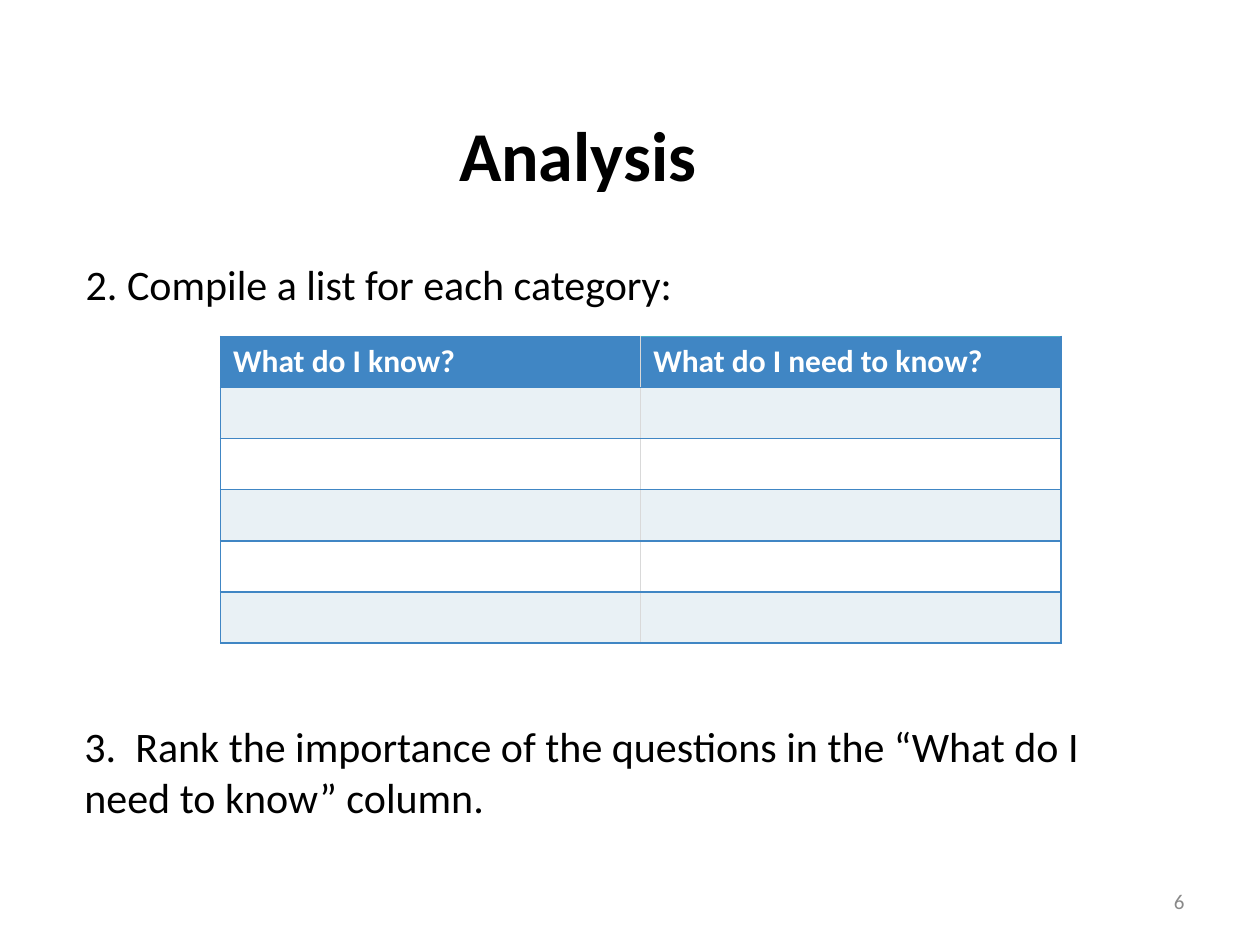
from dataclasses import dataclass

from lxml.etree import SubElement
from pptx import Presentation
from pptx.dml.color import RGBColor
from pptx.enum.text import MSO_ANCHOR as Anchor, MSO_AUTO_SIZE as AutoSize, PP_ALIGN as Align
from pptx.oxml.ns import qn
from pptx.util import Inches, Pt

SLIDE_WIDTH, SLIDE_HEIGHT = 10, 7.5
TWO_CONTENT_LAYOUT = 3
FONT = "Calibri"
BLUE, TEAL, GREY = "4086C4", "4BACC6", "D9D9D9"
STRIPES = ("FFFFFF", "E9F1F5")
HEADINGS = ("What do I know?", "What do I need to know?")
ROWS, ROW_HEIGHT, COLUMN_WIDTH = 6, 0.405, 3.335


@dataclass(frozen=True)
class Style:
    size: int
    color: str = "000000"
    bold: bool = False
    align: Align = Align.LEFT
    anchor: Anchor = Anchor.TOP


@dataclass(frozen=True)
class Block:
    text: str
    left: float
    top: float
    width: float
    height: float
    style: Style


ITEM = Style(24)
TITLE = Block("Analysis", 1, 0.83, 7.17, 0.77,
              Style(40, bold=True, align=Align.CENTER, anchor=Anchor.MIDDLE))
STEPS = (
    Block("2. Compile a list for each category:", 0.58, 2, 8.33, 1.31, ITEM),
    Block("3.  Rank the importance of the questions in the “What do I need to know” column.",
          0.57, 5.67, 8.76, 0.91, ITEM),
)
PAGE_NUMBER = Block("6", 7.17, 6.95, 2.33, 0.4,
                    Style(12, "898989", align=Align.RIGHT, anchor=Anchor.MIDDLE))


def color(value: str) -> RGBColor:
    return RGBColor.from_string(value)


def write(para, text: str, style: Style) -> None:
    para.alignment = style.align
    para.space_before = Pt(0)
    span = para.add_run()
    span.text = text
    span.font.name = FONT
    span.font.size = Pt(style.size)
    span.font.bold = style.bold
    span.font.color.rgb = color(style.color)


def fill_box(box, block: Block) -> None:
    box.left, box.top = Inches(block.left), Inches(block.top)
    box.width, box.height = Inches(block.width), Inches(block.height)
    frame = box.text_frame
    frame.word_wrap = True
    frame.auto_size = AutoSize.NONE
    frame.vertical_anchor = block.style.anchor
    write(frame.paragraphs[0], block.text, block.style)


def remove_bullet(para) -> None:
    properties = para._p.get_or_add_pPr()
    properties.set("marL", "0")
    properties.set("indent", "0")
    SubElement(properties, qn("a:buNone"))


def set_borders(cell, left: str, right: str, top: str, bottom: str) -> None:
    properties = cell._tc.get_or_add_tcPr()
    sides = (("L", left), ("R", right), ("T", top), ("B", bottom))
    for position, (side, value) in enumerate(sides):
        line = SubElement(properties, qn(f"a:ln{side}"), w=str(Pt(1)))
        SubElement(SubElement(line, qn("a:solidFill")), qn("a:srgbClr"), val=value)
        properties.insert(position, line)


def add_category_table(page) -> None:
    columns = len(HEADINGS)
    table = page.shapes.add_table(
        ROWS, columns, Inches(1.75), Inches(2.67),
        Inches(columns * COLUMN_WIDTH), Inches(ROWS * ROW_HEIGHT)).table
    for row_index, row in enumerate(table.rows):
        row.height = Inches(ROW_HEIGHT)
        for column_index, cell in enumerate(row.cells):
            is_heading, is_first = row_index == 0, column_index == 0
            cell.fill.solid()
            cell.fill.fore_color.rgb = color(BLUE if is_heading else STRIPES[row_index % 2])
            set_borders(cell,
                        left=BLUE if is_first else GREY,
                        right=GREY if is_first else BLUE,
                        top=TEAL if is_heading and not is_first else BLUE,
                        bottom=BLUE)
            if is_heading:
                write(cell.text_frame.paragraphs[0], HEADINGS[column_index],
                      Style(18, "FFFFFF", bold=True))


def main() -> None:
    deck = Presentation()
    deck.slide_width, deck.slide_height = Inches(SLIDE_WIDTH), Inches(SLIDE_HEIGHT)
    page = deck.slides.add_slide(deck.slide_layouts[TWO_CONTENT_LAYOUT])
    title, *bodies = page.placeholders
    fill_box(title, TITLE)
    for body, step in zip(bodies, STEPS):
        fill_box(body, step)
        remove_bullet(body.text_frame.paragraphs[0])
    fill_box(page.shapes.add_textbox(0, 0, 0, 0), PAGE_NUMBER)
    add_category_table(page)
    deck.save("out.pptx")


if __name__ == "__main__":
    main()
